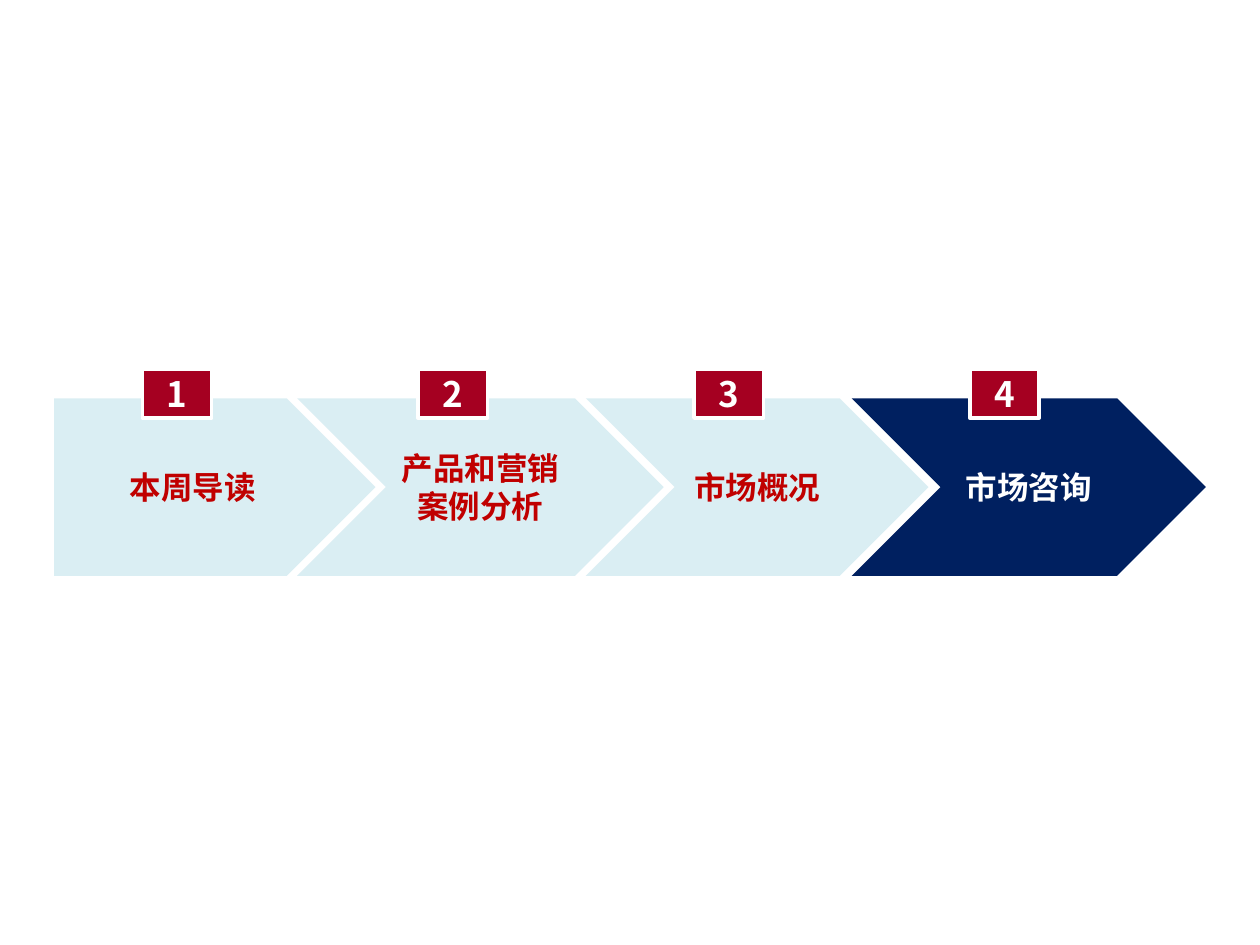
from dataclasses import dataclass

from lxml.etree import SubElement
from pptx import Presentation
from pptx.dml.color import RGBColor
from pptx.enum.shapes import MSO_SHAPE
from pptx.enum.text import MSO_ANCHOR, PP_ALIGN
from pptx.oxml.ns import qn
from pptx.util import Cm, Pt


@dataclass(frozen=True)
class Theme:
    font: str = "Noto Sans CJK SC"
    pale: str = "B7DEE8"
    navy: str = "002060"
    red: str = "C00000"
    crimson: str = "A50021"
    white: str = "FFFFFF"
    step_size: int = 18
    badge_size: int = 20


theme = Theme()


def write_text(shape, text, *, size, color, margin=0.25):
    """Write bold, centred text in a shape; margin is the side inset in cm."""
    frame = shape.text_frame
    frame.word_wrap = True
    frame.vertical_anchor = MSO_ANCHOR.MIDDLE
    frame.margin_left = frame.margin_right = Cm(margin)
    frame.margin_top = frame.margin_bottom = Cm(margin / 2)
    para = frame.paragraphs[0]
    para.alignment = PP_ALIGN.CENTER
    span = para.add_run()
    span.text = text
    span.font.name = theme.font
    span.font.size = Pt(size)
    span.font.bold = True
    span.font.color.rgb = RGBColor.from_string(color)
    SubElement(span.font._element, qn("a:ea"), typeface=theme.font)


def add_filled(page, kind, left, top, width, height, color, alpha=100):
    """Add a flat shape without outline; alpha is its opacity in percent."""
    shape = page.shapes.add_shape(kind, Cm(left), Cm(top), Cm(width), Cm(height))
    shape.shadow.inherit = False
    shape.line.fill.background()
    shape.fill.solid()
    shape.fill.fore_color.rgb = RGBColor.from_string(color)
    if alpha < 100:
        swatch = shape.element.spPr.find(qn("a:solidFill"))[0]
        SubElement(swatch, qn("a:alpha"), val=str(alpha * 1000))
    return shape


deck = Presentation()
deck.slide_width, deck.slide_height = Cm(25.4), Cm(19.05)
page = deck.slides.add_slide(deck.slide_layouts[6])

# Agenda arrows: text, left, width; the last one is the current section
steps = [
    ("本周导读", 1.09, 6.48),
    ("产品和营销案例分析", 5.99, 7.39),
    ("市场概况", 11.81, 6.91),
    ("市场咨询", 17.17, 7.14),
]
current = len(steps) - 1
for index, (text, left, width) in enumerate(steps):
    kind = MSO_SHAPE.CHEVRON if index else MSO_SHAPE.PENTAGON
    fill, alpha, ink = (
        (theme.navy, 100, theme.white) if index == current
        else (theme.pale, 50, theme.red)
    )
    arrow = add_filled(page, kind, left, 8.03, width, 3.58, fill, alpha)
    write_text(arrow, text, size=theme.step_size, color=ink)

# Number badges, evenly spaced along the top edge of the arrows
for index in range(len(steps)):
    badge = add_filled(page, MSO_SHAPE.RECTANGLE, 2.87 + 5.56 * index, 7.44,
                       1.4, 0.99, theme.crimson)
    badge.line.color.rgb = RGBColor.from_string(theme.white)
    badge.line.width = Pt(2)
    write_text(badge, str(index + 1), size=theme.badge_size,
               color=theme.white, margin=0)

deck.save("out.pptx")
